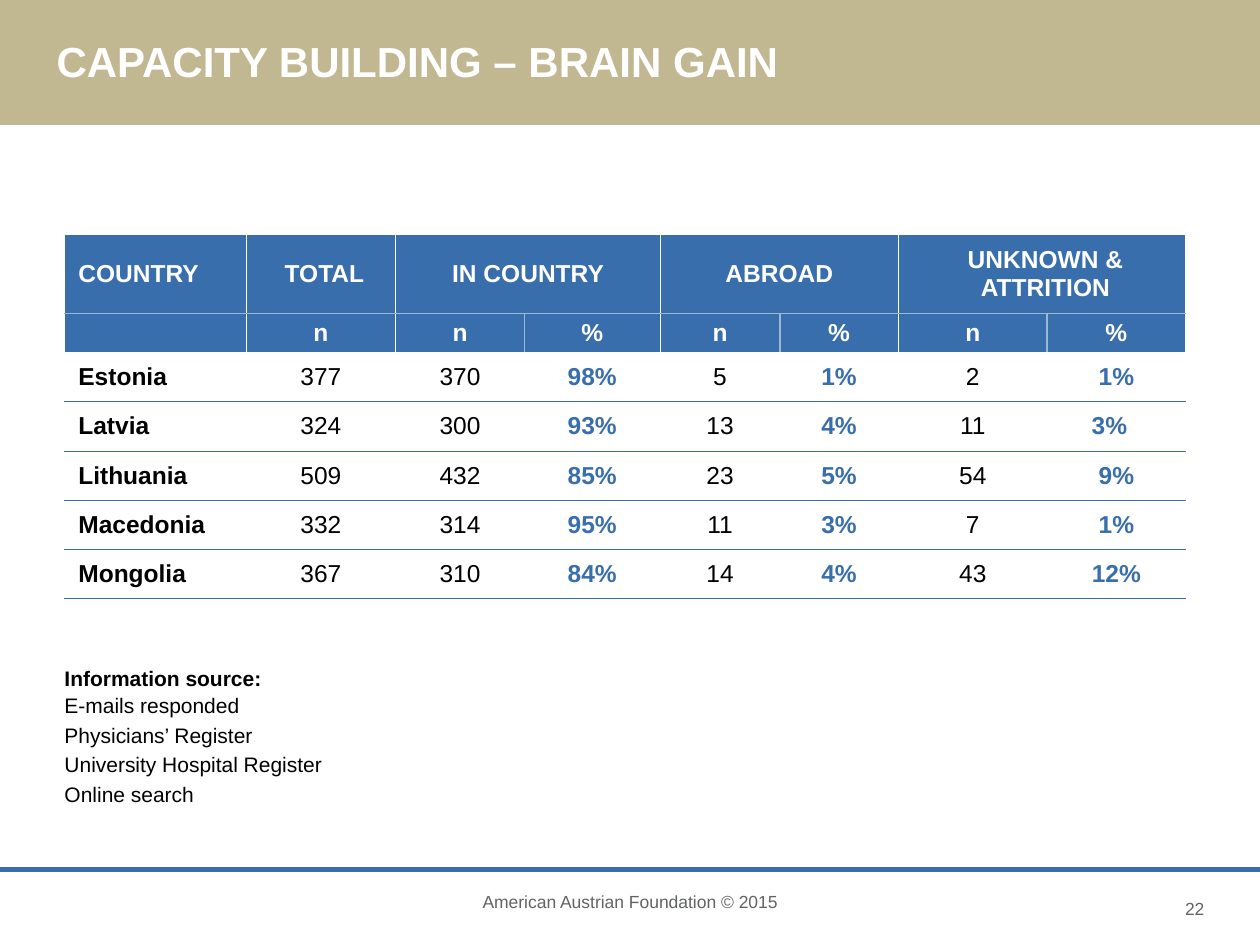
"""Build the Capacity Building - Brain Gain slide with its country table."""
from lxml import etree
from pptx import Presentation
from pptx.dml.color import RGBColor
from pptx.enum.shapes import MSO_CONNECTOR, MSO_SHAPE
from pptx.enum.text import MSO_ANCHOR, PP_ALIGN
from pptx.oxml import parse_xml
from pptx.oxml.ns import nsdecls, qn
from pptx.util import Cm, Pt

LEFT, CENTER, RIGHT = PP_ALIGN.LEFT, PP_ALIGN.CENTER, PP_ALIGN.RIGHT
TOP, MIDDLE, BOTTOM = MSO_ANCHOR.TOP, MSO_ANCHOR.MIDDLE, MSO_ANCHOR.BOTTOM
RECTANGLE, STRAIGHT = MSO_SHAPE.RECTANGLE, MSO_CONNECTOR.STRAIGHT
BLUE, PALE_BLUE, SAND = "396EAC", "9DB8D5", "C1B892"
WHITE, BLACK, GREY = "FFFFFF", "000000", "626464"


def color(value):
    return RGBColor.from_string(value)


def write(paragraph, text, size, value, bold=False, align=LEFT):
    paragraph.alignment = align
    run = paragraph.add_run()
    run.text = text
    run.font.name = "Arial"
    run.font.size = Pt(size)
    run.font.bold = bold
    run.font.color.rgb = color(value)


presentation = Presentation()
presentation.slide_width, presentation.slide_height = Cm(25.4), Cm(19.05)
slide = presentation.slides.add_slide(presentation.slide_layouts[6])

band = slide.shapes.add_shape(RECTANGLE, Cm(0), Cm(-0.08), Cm(25.4), Cm(2.6))
band.shadow.inherit = False
band.fill.solid()
band.fill.fore_color.rgb = color(SAND)
band.line.fill.background()

footer_rule = slide.shapes.add_connector(STRAIGHT, Cm(0), Cm(17.53), Cm(25.4), Cm(17.53))
footer_rule.line.color.rgb = color(BLUE)
footer_rule.line.width = Pt(3.25)
etree.SubElement(footer_rule._element.spPr, qn("a:effectLst"))

footers = [
    ("American Austrian Foundation © 2015", 0, 17.83, 25.4, CENTER),
    ("22", 19.25, 17.98, 5.28, RIGHT),
]
for text, left, top, width, align in footers:
    footer = slide.shapes.add_textbox(Cm(left), Cm(top), Cm(width), Cm(1.27))
    footer.text_frame.word_wrap = True
    write(footer.text_frame.paragraphs[0], text, 10, GREY, align=align)

rows = [
    ["COUNTRY", "TOTAL", "IN COUNTRY", "", "ABROAD", "", "UNKNOWN & ATTRITION", ""],
    ["", "n", "n", "%", "n", "%", "n", "%"],
    ["Estonia", "377", "370", "98%", "5", "1%", "2", "1%"],
    ["Latvia", "324", "300", "93%", "13", "4%", "11", "3%"],
    ["Lithuania", "509", "432", "85%", "23", "5%", "54", "9%"],
    ["Macedonia", "332", "314", "95%", "11", "3%", "7", "1%"],
    ["Mongolia", "367", "310", "84%", "14", "4%", "43", "12%"],
]
column_widths = [3.66, 3.02, 2.59, 2.74, 2.41, 2.39, 3, 2.79]
row_heights = [1.6, 0.79] + [0.99] * 5
left_margins = {(0, 1): 0.14, (0, 6): 0.14}
right_margins = {(3, 7): 0.28}
rules = [(WHITE, 0.5), (PALE_BLUE, 1), (WHITE, 1)] + [(BLUE, 0.5)] * 5

country_table = slide.shapes.add_table(
    len(rows), len(column_widths), Cm(1.3), Cm(4.72),
    Cm(sum(column_widths)), Cm(sum(row_heights))).table
country_table.first_row = country_table.horz_banding = False
for column, width in zip(country_table.columns, column_widths):
    column.width = Cm(width)
for row, height in zip(country_table.rows, row_heights):
    row.height = Cm(height)

for row_index, row in enumerate(rows):
    header = row_index < 2
    for column_index, text in enumerate(row):
        cell = country_table.cell(row_index, column_index)
        position = (row_index, column_index)
        first = column_index == 0
        percent = column_index in (3, 5, 7)
        divider = (PALE_BLUE, 1) if row_index == 1 else (WHITE, 0.5)
        borders = {
            "lnL": divider if percent else (WHITE, 0.5),
            "lnR": divider if column_index in (2, 4, 6) else (WHITE, 0.5),
            "lnT": rules[row_index],
            "lnB": rules[row_index + 1],
        }
        for tag, (value, width) in borders.items():
            cell._tc.get_or_add_tcPr().append(parse_xml(
                f'<a:{tag} {nsdecls("a")} w="{Pt(width)}"><a:solidFill>'
                f'<a:srgbClr val="{value}"/></a:solidFill></a:{tag}>'))
        cell.fill.solid()
        cell.fill.fore_color.rgb = color(BLUE if header else WHITE)
        cell.vertical_anchor = MIDDLE
        cell.margin_top = cell.margin_bottom = 0
        cell.margin_left = Cm(0.28 if first else left_margins.get(position, 0))
        cell.margin_right = Cm(right_margins.get(position, 0))
        if text:
            value = WHITE if header else BLUE if percent else BLACK
            write(cell.text_frame.paragraphs[0], text, 14, value,
                  header or first or percent, LEFT if first else CENTER)

for column_index in (2, 4, 6):
    country_table.cell(0, column_index).merge(country_table.cell(0, column_index + 1))

sources = ["Information source:", "E-mails responded", "Physicians’ Register",
           "University Hospital Register", "Online search"]
source_table = slide.shapes.add_table(
    len(sources), 1, Cm(1.3), Cm(13.33), Cm(8.61), Cm(3)).table
source_table.first_row = source_table.horz_banding = False
for row_index, text in enumerate(sources):
    source_table.rows[row_index].height = Cm(0.6)
    cell = source_table.cell(row_index, 0)
    cell.fill.background()
    cell.margin_left = cell.margin_right = cell.margin_top = cell.margin_bottom = 0
    heading = row_index == 0
    cell.vertical_anchor = BOTTOM if heading else MIDDLE
    write(cell.text_frame.paragraphs[0], text, 12, BLACK, heading)

title = slide.shapes.add_textbox(Cm(1.14), Cm(0.86), Cm(24.26), Cm(0.89))
frame = title.text_frame
frame.word_wrap = True
frame.vertical_anchor = MIDDLE
frame.margin_left = frame.margin_top = frame.margin_bottom = 0
frame.paragraphs[0].line_spacing = 0.85
write(frame.paragraphs[0], "CAPACITY BUILDING – BRAIN GAIN", 24, WHITE, True)

presentation.save("out.pptx")
